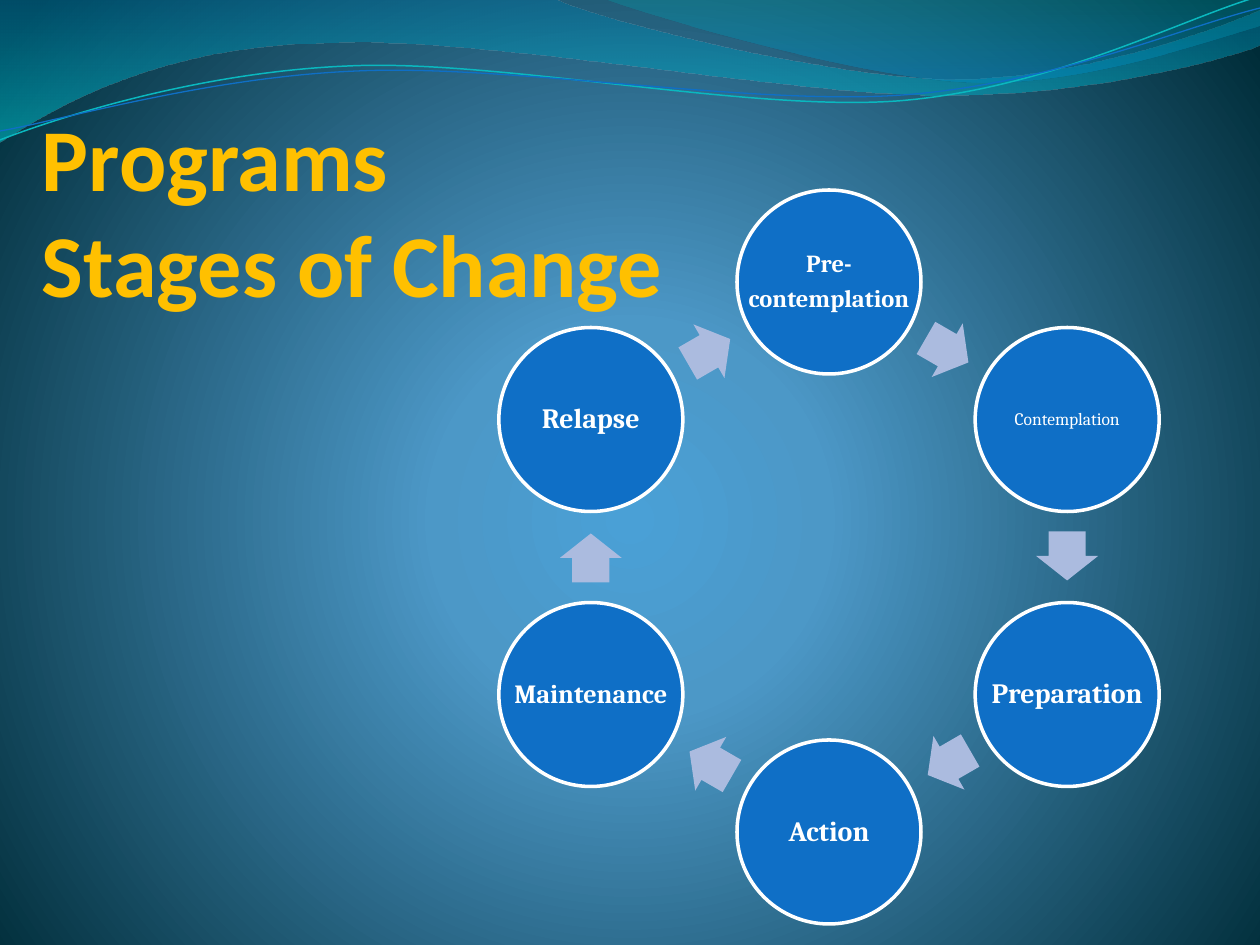
import math
from typing import NamedTuple

import pptx
import pptx.dml.color
import pptx.enum.shapes
import pptx.enum.text
import pptx.oxml
import pptx.oxml.ns
import pptx.util

EMU_PER_PX = 914400 / 126
SLIDE_W, SLIDE_H = 1260, 945
WHITE, BLUE, GOLD, LAVENDER, TEAL = "FFFFFF", "0F6FC6", "FFC000", "ABBBDF", "0AB8BF"

# Ring of stages
RING_X, RING_Y, RING_RADIUS = 829, 557, 275
DISC, ARROW_W, ARROW_H, ARROW_LAG = 184, 49, 62, 1
STRAND_TILT = -2.7
STRAND_CENTER = (629, 73)

Point = tuple[float, float]


class Stop(NamedTuple):
    position: int
    color: str
    alpha: int = 100


class Curve(NamedTuple):
    control1: Point
    control2: Point
    end: Point


class Line(NamedTuple):
    end: Point


class Wave(NamedTuple):
    start: Point
    segments: list[Curve | Line]
    stops: list[Stop]


class Strand(NamedTuple):
    start: Point
    segments: list[Curve | Line]
    color: str
    width: float


class Stage(NamedTuple):
    lines: list[str]
    size: int = 16
    bold: bool = True


WAVES = [
    Wave((0, 0), [
        Line((554, -1)),
        Curve((600, 21), (837, 79), (955, 79)),
        Curve((1075, 79), (1207, 33), (1260, 11)),
        Line((1261, 45)),
        Curve((1239, 55), (1096, 96), (940, 95)),
        Curve((784, 95), (481, 35), (324, 43)),
        Curve((163, 45), (58, 105), (-1, 142)),
        Line((0, 0)),
    ], [Stop(0, "0074A1", 45), Stop(100, "00C6CF", 55)]),
    Wave((604, -1), [
        Curve((641, 14), (859, 78), (969, 82)),
        Curve((1079, 87), (1211, 40), (1260, 26)),
        Line((1260, 0)),
        Line((604, -1)),
    ], [Stop(0, "00A1A9", 30), Stop(80, "008BBF", 45)]),
]
STRANDS = [
    Strand((0, 140), [
        Curve((60, 117), (199, 72), (349, 66)),
        Curve((498, 59), (747, 112), (898, 101)),
        Curve((1050, 89), (1182, 19), (1257, -3)),
    ], TEAL, 0.85),
    Strand((0, 131), [
        Curve((59, 121), (207, 77), (357, 71)),
        Curve((508, 64), (752, 106), (903, 95)),
        Curve((1053, 84), (1186, 26), (1260, 8)),
    ], BLUE, 0.75),
]
STAGES = [
    Stage(["Pre-", "contemplation"], 14),
    Stage(["Contemplation"], 10, False),
    Stage(["Preparation"]),
    Stage(["Action"]),
    Stage(["Maintenance"], 15),
    Stage(["Relapse"]),
]


def px(length: float) -> int:
    return round(length * EMU_PER_PX)


def rgb(color: str):
    return pptx.dml.color.RGBColor.from_string(color)


def apply(target, **values) -> None:
    for name, value in values.items():
        setattr(target, name, value)


def paint(shape, fill: str | None = None, line: str | None = None, width: float = 0) -> None:
    shape.shadow.inherit = False
    if fill:
        shape.fill.solid()
        shape.fill.fore_color.rgb = rgb(fill)
    else:
        shape.fill.background()
    if line:
        shape.line.color.rgb = rgb(line)
        shape.line.width = pptx.util.Pt(width)
    else:
        shape.line.fill.background()


def set_gradient(solid_fill, stops: list[Stop], direction: str) -> None:
    stop_xml = "".join(
        f'<a:gs pos="{s.position * 1000}"><a:srgbClr val="{s.color}">'
        f'<a:alpha val="{s.alpha * 1000}"/></a:srgbClr></a:gs>' for s in stops)
    solid_fill.getparent().replace(solid_fill, pptx.oxml.parse_xml(
        f'<a:gradFill {pptx.oxml.ns.nsdecls("a")} rotWithShape="1">'
        f"<a:gsLst>{stop_xml}</a:gsLst>{direction}</a:gradFill>"))


def turn(point: Point, center: Point, degrees: float) -> Point:
    (x, y), (cx, cy), a = point, center, math.radians(degrees)
    return (cx + (x - cx) * math.cos(a) - (y - cy) * math.sin(a),
            cy + (x - cx) * math.sin(a) + (y - cy) * math.cos(a))


def add_outline(slide, start: Point, segments: list[Curve | Line], tilt: float = 0):
    """Draw lines and cubic curves, tilted as a shape about the strand centre."""
    points = [turn(p, STRAND_CENTER, -tilt) for p in (start, *(p for s in segments for p in s))]
    first, *rest = [(px(x), px(y)) for x, y in points]
    builder = slide.shapes.build_freeform(*first)
    builder.add_line_segments(rest, close=not tilt)
    shape = builder.convert_to_shape()
    shape.rotation = tilt
    # Join each curve's three points into one cubic command
    steps = iter(list(shape._element.iter(pptx.oxml.ns.qn("a:lnTo"))))
    for segment in segments:
        commands = [next(steps) for _ in segment]
        if isinstance(segment, Curve):
            cubic = pptx.oxml.parse_xml(f'<a:cubicBezTo {pptx.oxml.ns.nsdecls("a")}/>')
            commands[0].addprevious(cubic)
            for command in commands:
                cubic.append(command[0])
                command.getparent().remove(command)
    return shape


def box_around(center: Point, width: int, height: int) -> tuple[int, ...]:
    x, y = center
    return px(x - width / 2), px(y - height / 2), px(width), px(height)


def ring_point(angle: float, radius: float) -> Point:
    return turn((RING_X + radius, RING_Y), (RING_X, RING_Y), angle)


def add_text(slide, box: tuple[int, ...], text: str, anchor, margin: int, **font):
    frame = slide.shapes.add_textbox(*box).text_frame
    apply(frame, text=text, word_wrap=True, vertical_anchor=anchor, margin_left=px(margin),
          margin_right=px(2), margin_top=px(margin), margin_bottom=px(margin))
    color = rgb(font.pop("color"))
    for paragraph in frame.paragraphs:
        for run in paragraph.runs:
            apply(run.font, **font)
            run.font.color.rgb = color
    return frame


def add_stage(slide, stage: Stage, angle: float) -> None:
    box = box_around(ring_point(angle, RING_RADIUS), DISC, DISC)
    paint(slide.shapes.add_shape(pptx.enum.shapes.MSO_SHAPE.OVAL, *box), BLUE, WHITE, 2)
    frame = add_text(slide, box, "\n".join(stage.lines), pptx.enum.text.MSO_ANCHOR.MIDDLE, 2,
                     name="Cambria", size=pptx.util.Pt(stage.size), bold=stage.bold, color=WHITE)
    for paragraph in frame.paragraphs:
        apply(paragraph, alignment=pptx.enum.text.PP_ALIGN.CENTER, line_spacing=0.9,
              space_after=pptx.util.Pt(round(stage.size * 0.35)))


def add_ring_arrow(slide, angle: float) -> None:
    x, y = ring_point(angle, RING_RADIUS * math.cos(math.radians(30)))
    heading = math.radians(angle + 90)
    center = (x - ARROW_LAG * math.cos(heading), y - ARROW_LAG * math.sin(heading))
    arrow = slide.shapes.add_shape(pptx.enum.shapes.MSO_SHAPE.RIGHT_ARROW,
                                   *box_around(center, ARROW_W, ARROW_H))
    arrow.adjustments[0], arrow.adjustments[1] = 0.6, 0.5
    arrow.rotation = (angle + 90) % 360
    paint(arrow, LAVENDER)


def main() -> None:
    deck = pptx.Presentation()
    apply(deck, slide_width=px(SLIDE_W), slide_height=px(SLIDE_H))
    slide = deck.slides.add_slide(deck.slide_layouts[6])
    solid = pptx.oxml.ns.qn("a:solidFill")

    # Background glow
    slide.background.fill.solid()
    set_gradient(next(slide.background._cSld.iter(solid)),
                 [Stop(0, "4AA0D6"), Stop(25, "4C98C7"), Stop(100, "002C38")],
                 '<a:path path="circle"><a:fillToRect l="10000" t="110000" '
                 'r="10000" b="100000"/></a:path>')

    # Waves and strands along the top
    for wave in WAVES:
        shape = add_outline(slide, wave.start, wave.segments)
        paint(shape, BLUE)
        set_gradient(shape._element.spPr.find(solid), wave.stops,
                     '<a:lin ang="5400000" scaled="1"/>')
    for strand in STRANDS:
        shape = add_outline(slide, strand.start, strand.segments, STRAND_TILT)
        paint(shape, line=strand.color, width=strand.width)

    add_text(slide, (px(42), px(63), px(1082), px(252)), "Programs\vStages of Change",
             pptx.enum.text.MSO_ANCHOR.BOTTOM, 0,
             name="Calibri", size=pptx.util.Pt(50.4), bold=True, color=GOLD)

    # Cycle of stages, clockwise from the top
    step = 360 / len(STAGES)
    for index, stage in enumerate(STAGES):
        angle = index * step - 90
        add_stage(slide, stage, angle)
        add_ring_arrow(slide, angle + step / 2)

    deck.save("out.pptx")


if __name__ == "__main__":
    main()
